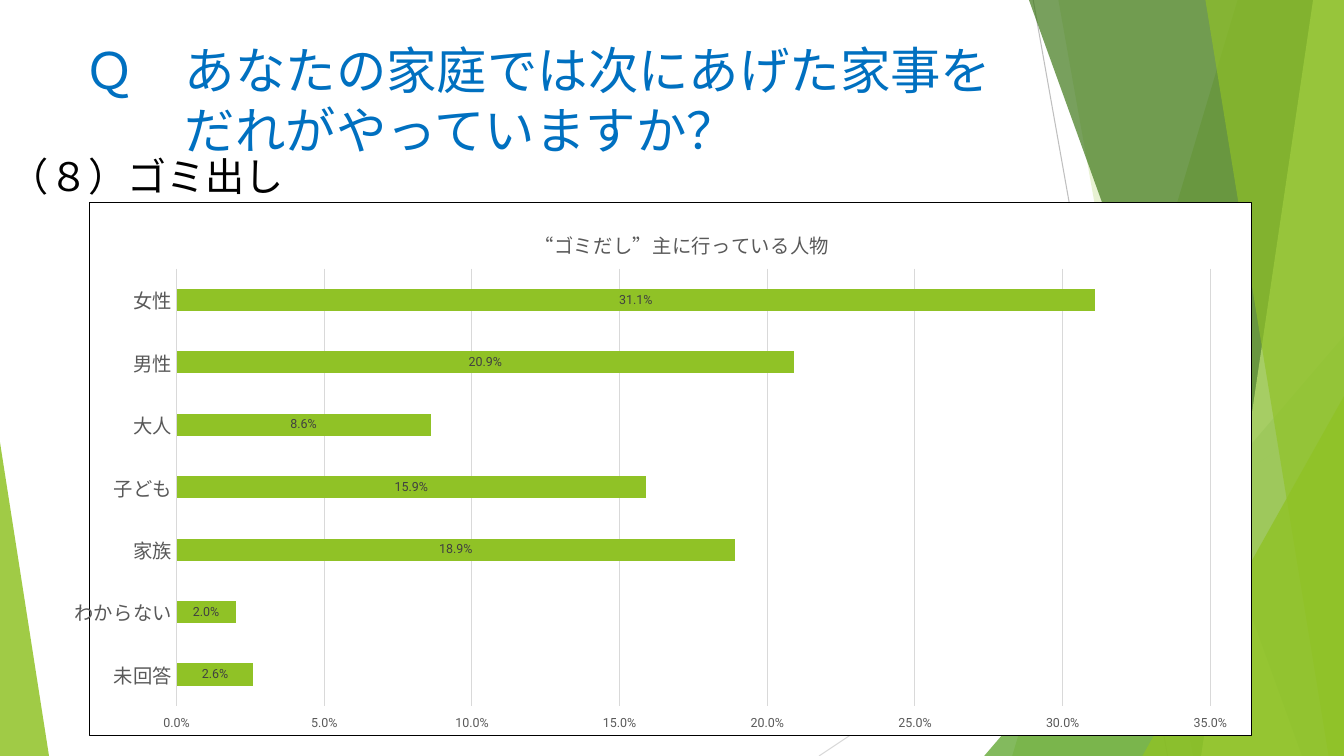
import pptx
import pptx.util
import pptx.dml.color
import pptx.chart.data
import pptx.enum.chart
import pptx.enum.shapes
import pptx.enum.text
import pptx.oxml
import lxml.etree
from dataclasses import dataclass

Pt = pptx.util.Pt
Enum = pptx.enum.chart
Shape = pptx.enum.shapes.MSO_SHAPE


@dataclass(frozen=True)
class Theme:
    # colours
    lime: str = "90C226"
    green: str = "54A021"
    dark: str = "3F7819"
    pale: str = "C0E474"
    blue: str = "0070C0"
    black: str = "000000"
    white: str = "FFFFFF"
    text: str = "595959"
    label: str = "404040"
    rule: str = "D9D9D9"
    edge: str = "BFBFBF"
    # type
    face: str = "Roboto"
    body: str = "Calibri"
    head: int = 36
    sub: int = 28
    mid: int = 14
    small: int = 9


theme = Theme()


def rgb(code):
    return pptx.dml.color.RGBColor.from_string(code)


def style(font, size, code, face=theme.face):
    font.size, font.name, font.bold = Pt(size), face, False
    font.color.rgb = rgb(code)


def rule(line, code):
    line.color.rgb = rgb(code)
    line.width = Pt(0.75)


def child(parent, tag, **attrs):
    node = lxml.etree.SubElement(parent, pptx.oxml.ns.qn(tag))
    for key, value in attrs.items():
        node.set(key, str(value))
    return node


def tint(shape, code, alpha):
    """Fill a shape with a see-through colour and no outline."""
    shape.shadow.inherit = False
    shape.line.fill.background()
    shape.fill.solid()
    shape.fill.fore_color.rgb = rgb(code)
    node = shape.fill._xPr.find(".//" + pptx.oxml.ns.qn("a:srgbClr"))
    child(node, "a:alpha", val=alpha * 1000)


def decor(slide, box):
    """Thin lines, slanted bands and corner wedges over the whole box."""
    left, top, width, height = box
    right, foot = left + width, top + height

    def thread(x1, y1, x2, y2, code):
        line = slide.shapes.add_connector(
            pptx.enum.shapes.MSO_CONNECTOR.STRAIGHT,
            Pt(left + x1), Pt(top + y1), Pt(left + x2), Pt(top + y2))
        rule(line.line, code)
        child(line._element.spPr, "a:effectLst")

    def band(high, low, code, alpha):
        # runs to the right edge of the box
        maker = slide.shapes.build_freeform(Pt(left + high), Pt(top))
        maker.add_line_segments([(Pt(right), Pt(top)), (Pt(right), Pt(foot)),
                                 (Pt(left + low), Pt(foot))], close=True)
        tint(maker.convert_to_shape(), code, alpha)

    def wedge(x, wide, tall, tip, code, alpha):
        # stands on the bottom edge of the box
        shape = slide.shapes.add_shape(
            Shape.ISOSCELES_TRIANGLE, Pt(left + x), Pt(foot - tall),
            Pt(wide), Pt(tall))
        shape.adjustments[0] = tip
        tint(shape, code, alpha)

    thread(738, 0, 834, height, theme.edge)
    thread(width, 290, 585, height, theme.rule)
    band(884, 723, theme.lime, 30)
    band(756, 852, theme.lime, 20)
    wedge(703, width - 703, 300, 1, theme.green, 72)
    band(735, 930, theme.dark, 70)
    band(938, 858, theme.pale, 70)
    band(861, 949, theme.lime, 65)
    wedge(816, width - 816, 257, 1, theme.lime, 80)
    wedge(0, 35, 224, 0, theme.lime, 85)


def frame(slide, box):
    """Add a wrapping text box and return its first paragraph."""
    shape = slide.shapes.add_textbox(*map(Pt, box))
    shape.text_frame.word_wrap = True
    shape.text_frame.vertical_anchor = pptx.enum.text.MSO_ANCHOR.MIDDLE
    return shape.text_frame.paragraphs[0]


def heading(slide, box):
    para = frame(slide, box)
    para.line_spacing = Pt(43)
    # the second line hangs two characters in
    props = para._p.get_or_add_pPr()
    props.set("marL", str(Pt(2 * theme.head)))
    props.set("indent", str(-Pt(2 * theme.head)))
    for i, words in enumerate(("Ｑ　あなたの家庭では次にあげた家事を",
                               "だれがやっていますか？")):
        if i:
            para.add_line_break()
        run = para.add_run()
        run.text = words
        style(run.font, theme.head, theme.blue)


def topic(slide, box):
    para = frame(slide, box)
    para.line_spacing = 0.9
    run = para.add_run()
    run.text = "（８）ゴミ出し"
    style(run.font, theme.sub, theme.black, theme.body)


def place(owner, x, y, size=None):
    """Fix a chart part at fractions of the chart area."""
    for old in owner.findall(pptx.oxml.ns.qn("c:layout")):
        owner.remove(old)
    layout = child(owner, "c:layout")
    manual = child(layout, "c:manualLayout")
    if size:
        child(manual, "c:layoutTarget", val="inner")
    child(manual, "c:xMode", val="edge")
    child(manual, "c:yMode", val="edge")
    child(manual, "c:x", val=x)
    child(manual, "c:y", val=y)
    if size:
        child(manual, "c:w", val=size[0])
        child(manual, "c:h", val=size[1])
    return layout


def graph(slide, box):
    data = pptx.chart.data.CategoryChartData(number_format="0.0%")
    data.categories = ["女性", "男性", "大人", "子ども", "家族", "わからない", "未回答"]
    data.add_series("Series 1", [0.311, 0.209, 0.086, 0.159, 0.189, 0.02, 0.026])
    chart = slide.shapes.add_chart(
        Enum.XL_CHART_TYPE.BAR_CLUSTERED, *map(Pt, box), data).chart
    style(chart.font, 10, theme.black)
    chart.has_legend = False

    # title
    chart.has_title = True
    run = chart.chart_title.text_frame.paragraphs[0].add_run()
    run.text = "“ゴミだし”主に行っている人物"
    style(run.font, theme.mid, theme.text)
    title = chart.chart_title._element
    title.insert(1, place(title, 0.38, 0.043))
    chart.chart_title.include_in_layout = False

    # bars and their labels
    plot = chart.plots[0]
    plot.gap_width = 182
    plot.vary_by_categories = False
    bars = plot.series[0]
    bars.format.fill.solid()
    bars.format.fill.fore_color.rgb = rgb(theme.lime)
    labels = bars.data_labels
    labels.show_value = True
    labels.position = Enum.XL_LABEL_POSITION.CENTER
    labels.number_format, labels.number_format_is_linked = "0.0%", False
    style(labels.font, theme.small, theme.label)

    # axes
    cats, vals = chart.category_axis, chart.value_axis
    for axis, size in ((cats, theme.mid), (vals, theme.small)):
        axis.major_tick_mark = axis.minor_tick_mark = Enum.XL_TICK_MARK.NONE
        style(axis.tick_labels.font, size, theme.text)
    cats.reverse_order = True
    rule(cats.format.line, theme.rule)
    vals.minimum_scale, vals.maximum_scale, vals.major_unit = 0, 0.35, 0.05
    vals.tick_labels.number_format = "0.0%"
    vals.tick_labels.number_format_is_linked = False
    vals.tick_label_position = Enum.XL_TICK_LABEL_POSITION.HIGH
    vals.format.line.fill.background()
    rule(vals.major_gridlines.format.line, theme.rule)

    # plot area and chart frame
    area = chart._chartSpace.chart.plotArea
    area.insert(0, place(area, 0.075, 0.125, (0.89, 0.82)))
    props = pptx.oxml.parse_xml(
        f'<c:spPr {pptx.oxml.ns.nsdecls("c", "a")}>'
        f'<a:solidFill><a:srgbClr val="{theme.white}"/></a:solidFill>'
        f'<a:ln w="{Pt(0.75)}"><a:solidFill><a:srgbClr val="{theme.black}"/>'
        '</a:solidFill></a:ln></c:spPr>')
    chart._chartSpace.chart.addnext(props)


def main():
    deck = pptx.Presentation()
    deck.slide_width, deck.slide_height = Pt(960), Pt(540)
    slide = deck.slides.add_slide(deck.slide_layouts[6])
    decor(slide, (0, 0, 960, 540))
    heading(slide, (53, 19.5, 755, 103.5))
    topic(slide, (0, 108, 227.5, 39))
    graph(slide, (53, 144, 841, 381.5))
    deck.save("out.pptx")


if __name__ == "__main__":
    main()
